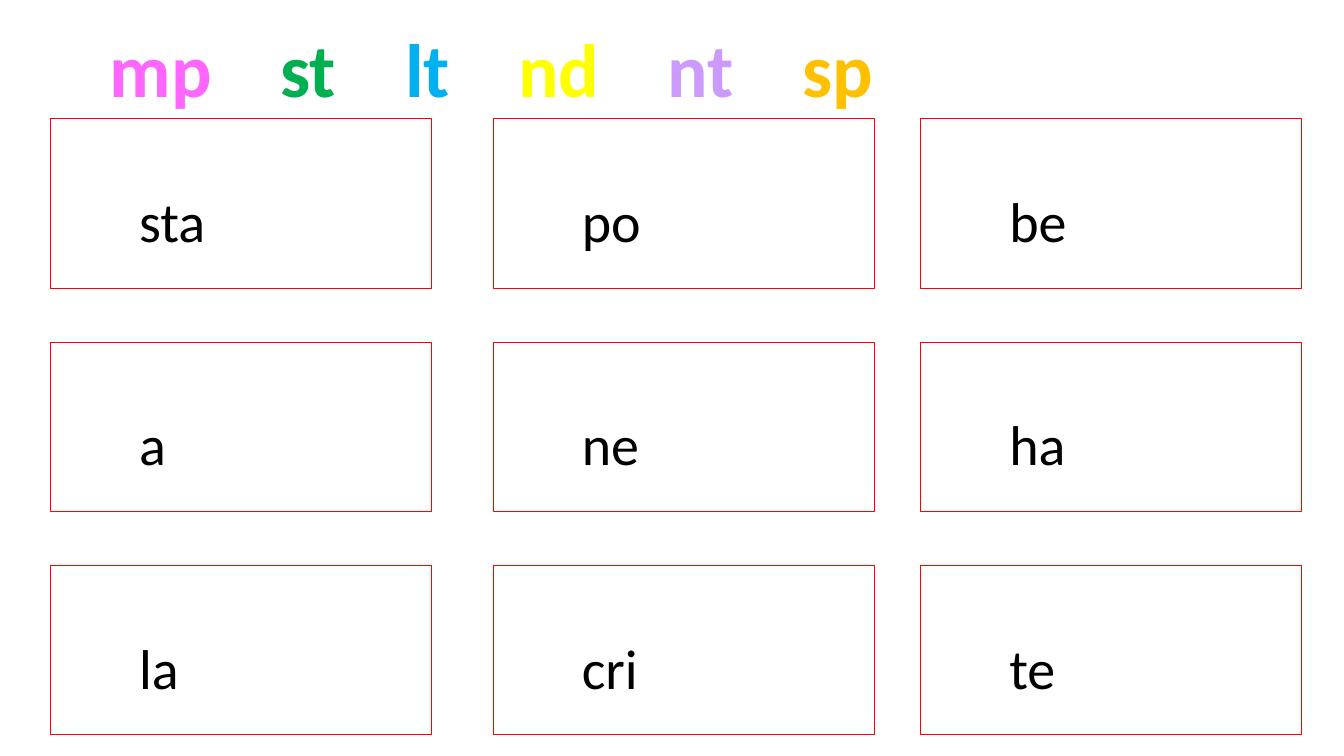
from dataclasses import dataclass
from itertools import product

from lxml.etree import SubElement
from pptx import Presentation
from pptx.dml.color import RGBColor as RGB
from pptx.enum.shapes import MSO_SHAPE as Shape
from pptx.enum.text import MSO_ANCHOR as Anchor, MSO_AUTO_SIZE as Fit, PP_ALIGN as Align
from pptx.oxml.ns import qn
from pptx.util import Inches, Pt

HUES = {
    "pink": "FF66FF", "green": "00B050", "blue": "00B0F0", "yellow": "FFFF00",
    "purple": "CC99FF", "orange": "FFC000", "red": "FF0000", "black": "000000",
}


@dataclass
class Blend:
    """A word ending, its colour and its tab stop in inches."""
    text: str
    hue: str
    stop: float = 0


@dataclass
class Card:
    """A word start and the corner of its box in inches."""
    text: str
    left: float
    top: float


BLENDS = [
    Blend("mp", "pink"), Blend("st", "green", 1.69), Blend("lt", "blue", 2.93),
    Blend("nd", "yellow", 4.05), Blend("nt", "purple", 5.53), Blend("sp", "orange", 6.87),
]
WORDS = ["sta", "po", "be", "a", "ne", "ha", "la", "cri", "te"]
LEFTS = [0.5, 4.89, 9.13]
TOPS = [1.18 + 2.215 * row for row in range(3)]
CARDS = [Card(word, left, top) for word, (top, left) in zip(WORDS, product(TOPS, LEFTS))]


def write(para, text: str, *, size: float, hue: str, bold: bool = False) -> None:
    """Add a formatted run to a paragraph."""
    run = para.add_run()
    run.text = text
    font = run.font
    font.name, font.size, font.bold = "Calibri", Pt(size), bold
    font.color.rgb = RGB.from_string(HUES[hue])


def draw_title(title, blends: list[Blend]) -> None:
    """Set the coloured endings at tab stops in the title."""
    title.left, title.top = Inches(0.99), Inches(0.17)
    title.width, title.height = Inches(10.97), Inches(1.01)
    frame = title.text_frame
    frame.auto_size, frame.vertical_anchor = Fit.NONE, Anchor.TOP
    para = frame.paragraphs[0]
    para.alignment = Align.LEFT
    tabs = SubElement(para._p.get_or_add_pPr(), qn("a:tabLst"))
    for blend in blends:
        if blend.stop:
            SubElement(tabs, qn("a:tab"), pos=str(Inches(blend.stop)), algn="l")
        text = "\t" + blend.text if blend.stop else blend.text
        write(para, text, size=54, hue=blend.hue, bold=True)


def draw_card(slide, card: Card) -> None:
    """Draw a red box that holds a word start."""
    box = slide.shapes.add_shape(
        Shape.RECTANGLE, Inches(card.left), Inches(card.top), Inches(3.78), Inches(1.68))
    box.shadow.inherit = False
    box.fill.background()
    box.line.color.rgb = RGB.from_string(HUES["red"])
    box.line.width = Pt(0.75)
    frame = box.text_frame
    frame.word_wrap, frame.vertical_anchor = True, Anchor.TOP
    frame.margin_left, frame.margin_top = Inches(0.88), Inches(0.67)
    para = frame.paragraphs[0]
    para.alignment = Align.LEFT
    write(para, card.text, size=40, hue="black")


def main() -> None:
    """Build and save the slide."""
    deck = Presentation()
    deck.slide_width, deck.slide_height = Inches(13.33), Inches(7.5)
    slide = deck.slides.add_slide(deck.slide_layouts[5])
    draw_title(slide.shapes.title, BLENDS)
    for card in CARDS:
        draw_card(slide, card)
    deck.save("out.pptx")


if __name__ == "__main__":
    main()
